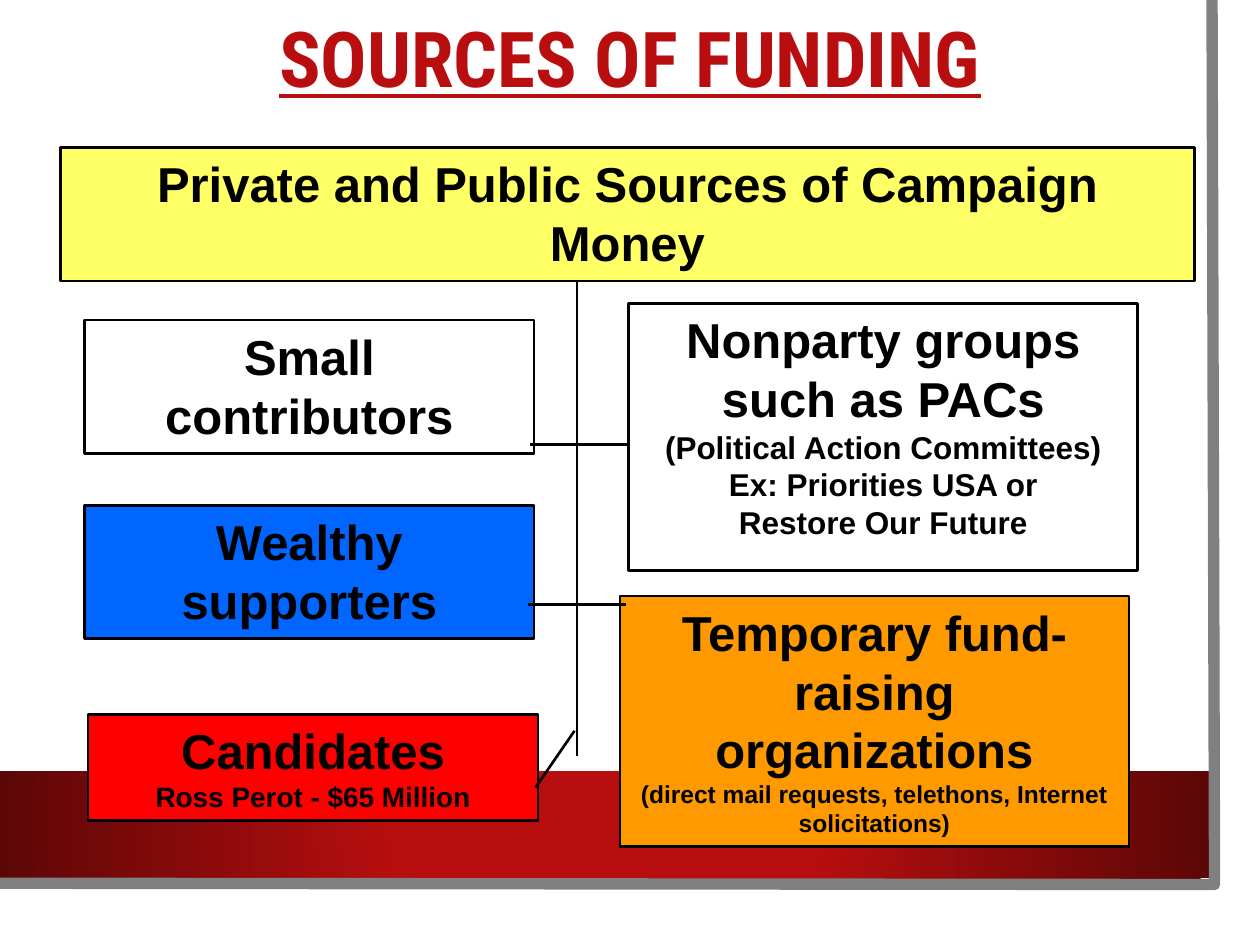
from lxml.etree import SubElement
from pptx import Presentation
from pptx.dml.color import RGBColor
from pptx.enum.shapes import MSO_CONNECTOR as Connector, MSO_SHAPE as Shape
from pptx.enum.text import MSO_ANCHOR as Anchor, MSO_AUTO_SIZE as AutoSize, PP_ALIGN as Align
from pptx.oxml.ns import qn
from pptx.util import Inches, Pt

COLORS = {
    "black": "000000", "white": "FFFFFF", "gray": "808080",
    "crimson": "B80E0F", "maroon": "5C0707", "blue": "0066FF",
    "orange": "FF9900", "red": "FF0000", "yellow": "FFFF66",
}
TITLE = "SOURCES OF FUNDING"
HEADING_SIZE = 28

# (left, top, width, height), fill, heading, detail lines, detail size
BOXES = [
    ((0.67, 2.54, 3.57, 1.06), "white", "Small contributors", [], None),
    ((0.67, 4.01, 3.57, 1.06), "blue", "Wealthy supporters", [], None),
    ((4.99, 2.41, 4.04, 2.12), "white", "Nonparty groups such as PACs",
     ["(Political Action Committees)", "Ex: Priorities USA or", "Restore Our Future"], 18),
    ((4.92, 4.73, 4.04, 1.99), "orange", "Temporary fund-raising organizations",
     ["(direct mail requests, telethons, Internet solicitations)"], 14),
    ((0.7, 5.67, 3.57, 0.84), "red", "Candidates", ["Ross Perot - $65 Million"], 16),
    ((0.48, 1.17, 9, 1.06), "yellow", "Private and Public Sources of Campaign Money", [], None),
]
# start, end, line width
TRUNK = ((4.58, 1.94), (4.58, 6), 0.75)
BRANCHES = [
    ((4.21, 3.53), (4.99, 3.53), 1.5),
    ((4.19, 4.8), (4.97, 4.8), 1.5),
    ((4.25, 6.25), (4.56, 5.8), 1.5),
]
PAGE_EDGE = [(9.62, 0), (9.64, 7.02), (-0.02, 7.01)]


def color(name):
    return RGBColor.from_string(COLORS[name])


def inches(values):
    return [Inches(value) for value in values]


def set_line(shape, name, width):
    shape.line.color.rgb = color(name)
    shape.line.width = Pt(width)


def style_font(paragraph, face, size, name):
    paragraph.alignment = Align.CENTER
    font = paragraph.font
    font.name, font.size, font.bold = face, Pt(size), True
    font.color.rgb = color(name)


def add_band(slide):
    """Red band with a gradient that darkens outward from its centre."""
    band = slide.shapes.add_shape(Shape.RECTANGLE, *inches((0, 6.12, 9.6, 0.85)))
    band.shadow.inherit = False
    band.line.fill.background()
    band.fill.gradient()
    for stop, name, position in zip(band.fill.gradient_stops, ("crimson", "maroon"), (0.34, 1)):
        stop.color.rgb = color(name)
        stop.position = position
    gradient = band.element.spPr.find(qn("a:gradFill"))
    gradient.remove(gradient.find(qn("a:lin")))
    circle = SubElement(gradient, qn("a:path"), path="circle")
    SubElement(circle, qn("a:fillToRect"), dict.fromkeys("ltrb", "50000"))


def add_page_edge(slide):
    start, *rest = [inches(point) for point in PAGE_EDGE]
    builder = slide.shapes.build_freeform(*start)
    builder.add_line_segments(rest, close=False)
    edge = builder.convert_to_shape()
    edge.shadow.inherit = False
    edge.fill.background()
    set_line(edge, "gray", 6.5)


def add_title(slide):
    title = slide.shapes.title
    title.left, title.top, title.width, title.height = inches((0.5, 0, 9, 1))
    title.text_frame.text = TITLE
    title.text_frame.vertical_anchor = Anchor.MIDDLE
    paragraph = title.text_frame.paragraphs[0]
    paragraph.line_spacing = 0.9
    style_font(paragraph, "Roboto Condensed", 44, "crimson")
    paragraph.font.underline = True


def add_box(slide, place, fill, heading, details, detail_size):
    box = slide.shapes.add_shape(Shape.RECTANGLE, *inches(place))
    box.shadow.inherit = False
    box.fill.solid()
    box.fill.fore_color.rgb = color(fill)
    set_line(box, "black", 1.5)
    frame = box.text_frame
    frame.word_wrap = True
    frame.auto_size = AutoSize.SHAPE_TO_FIT_TEXT
    frame.vertical_anchor = Anchor.TOP
    frame.text = "\n".join([heading, *details])
    for index, paragraph in enumerate(frame.paragraphs):
        style_font(paragraph, "Arial", detail_size if index else HEADING_SIZE, "black")


def add_line(slide, start, end, width):
    line = slide.shapes.add_connector(Connector.STRAIGHT, *inches(start + end))
    set_line(line, "black", width)
    SubElement(line.element.spPr, qn("a:effectLst"))


def main():
    presentation = Presentation()
    presentation.slide_width, presentation.slide_height = inches((10, 7.5))
    slide = presentation.slides.add_slide(presentation.slide_layouts[5])
    add_band(slide)
    add_page_edge(slide)
    add_title(slide)
    add_line(slide, *TRUNK)
    for box in BOXES:
        add_box(slide, *box)
    for branch in BRANCHES:
        add_line(slide, *branch)
    presentation.save("out.pptx")


if __name__ == "__main__":
    main()
